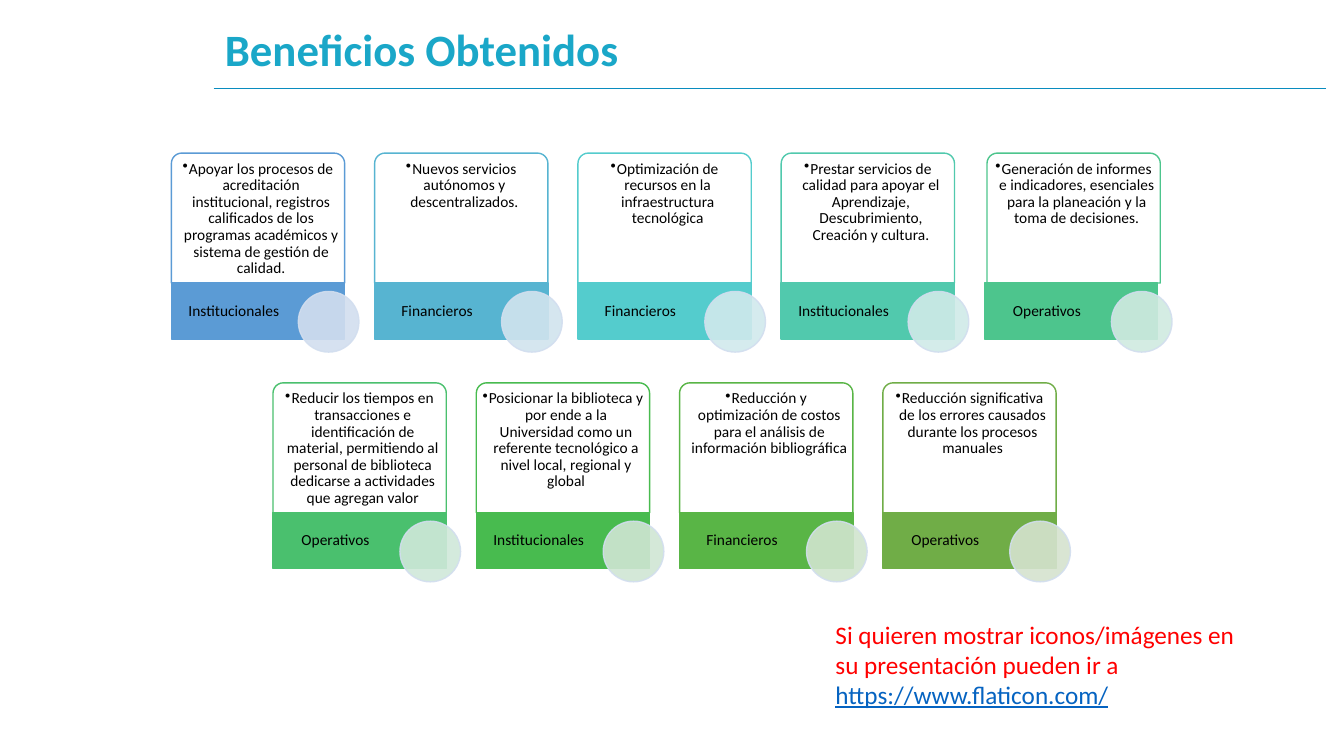
import pptx
import pptx.util
import pptx.dml.color
import pptx.enum.shapes
import pptx.enum.text
import pptx.oxml
import pptx.oxml.ns
from lxml import etree

Pt = pptx.util.Pt
RGBColor = pptx.dml.color.RGBColor
Shape = pptx.enum.shapes.MSO_SHAPE
Anchor = pptx.enum.text.MSO_ANCHOR
Align = pptx.enum.text.PP_ALIGN
AutoSize = pptx.enum.text.MSO_AUTO_SIZE
qn = pptx.oxml.ns.qn

WHITE = RGBColor(0xFF, 0xFF, 0xFF)
BLACK = RGBColor(0x00, 0x00, 0x00)
RED = RGBColor(0xFF, 0x00, 0x00)
LINK_BLUE = RGBColor(0x05, 0x63, 0xC1)
TITLE_TEAL = RGBColor(0x1A, 0xA7, 0xC8)
RULE_BLUE = RGBColor(0x09, 0x8C, 0xBF)
CIRCLE_EDGE = RGBColor(0xD2, 0xDE, 0xEF)

CARD_WIDTH, CARD_HEIGHT = 123.8, 92.8
BAR_HEIGHT, LABEL_WIDTH = 39.9, 87.1
COLUMN_STEP, ROW_STEP = 145.2, 164.1
FIRST_LEFT, FIRST_TOP = 122.4, 109.4
LAST_CARD_SHIFT = 1.8

ROWS = [
    [
        ("Institucionales", "Apoyar los procesos de acreditación institucional, registros "
         "calificados de los programas académicos y sistema de gestión de calidad.",
         RGBColor(0x5B, 0x9B, 0xD5), RGBColor(0xD2, 0xDE, 0xEF)),
        ("Financieros", "Nuevos servicios autónomos y descentralizados.",
         RGBColor(0x57, 0xB4, 0xD1), RGBColor(0xD1, 0xE4, 0xEE)),
        ("Financieros", "Optimización de recursos en la infraestructura tecnológica",
         RGBColor(0x54, 0xCC, 0xCD), RGBColor(0xD1, 0xE9, 0xED)),
        ("Institucionales", "Prestar servicios de calidad para apoyar el Aprendizaje, "
         "Descubrimiento, Creación y cultura.",
         RGBColor(0x51, 0xC9, 0xAD), RGBColor(0xD0, 0xEB, 0xE8)),
        ("Operativos", "Generación de informes e indicadores, esenciales para la "
         "planeación y la toma de decisiones.",
         RGBColor(0x4D, 0xC5, 0x8D), RGBColor(0xD0, 0xEA, 0xE1)),
    ],
    [
        ("Operativos", "Reducir los tiempos en transacciones e identificación de material, "
         "permitiendo al personal de biblioteca dedicarse a actividades que agregan valor",
         RGBColor(0x4A, 0xC0, 0x6E), RGBColor(0xD0, 0xE8, 0xDA)),
        ("Institucionales", "Posicionar la biblioteca y por ende a la Universidad como un "
         "referente tecnológico a nivel local, regional y global",
         RGBColor(0x48, 0xBB, 0x4F), RGBColor(0xD0, 0xE6, 0xD4)),
        ("Financieros", "Reducción y optimización de costos para el análisis de "
         "información bibliográfica",
         RGBColor(0x59, 0xB5, 0x46), RGBColor(0xD1, 0xE5, 0xCF)),
        ("Operativos", "Reducción significativa de los errores causados durante los "
         "procesos manuales",
         RGBColor(0x70, 0xAD, 0x47), RGBColor(0xD5, 0xE3, 0xCF)),
    ],
]


class Page:
    font_name = "Calibri"
    small, large, heading = 11, 18, 32
    opacity = "90000"

    def __init__(self, deck):
        self.slide = deck.slides.add_slide(deck.slide_layouts[5])

    def style(self, paragraph, size, color):
        paragraph.font.name = self.font_name
        paragraph.font.size = Pt(size)
        paragraph.font.color.rgb = color

    def title(self, text, left, top, width, height):
        box = self.slide.shapes.title
        box.left, box.top, box.width, box.height = map(Pt, (left, top, width, height))
        frame = box.text_frame
        frame.text = text
        frame.auto_size = AutoSize.NONE
        frame.vertical_anchor = Anchor.MIDDLE
        paragraph = frame.paragraphs[0]
        paragraph.alignment = Align.LEFT
        paragraph.line_spacing = 0.9
        self.style(paragraph, self.heading, TITLE_TEAL)
        paragraph.font.bold = True

    def rule(self, left, top, right):
        line = self.slide.shapes.add_connector(
            pptx.enum.shapes.MSO_CONNECTOR.STRAIGHT, Pt(left), Pt(top), Pt(right), Pt(top))
        line.line.color.rgb = RULE_BLUE
        line.line.width = Pt(0.5)
        etree.SubElement(line._element.spPr, qn("a:effectLst"))

    def shape(self, kind, left, top, width, height, fill, edge):
        shape = self.slide.shapes.add_shape(kind, Pt(left), Pt(top), Pt(width), Pt(height))
        shape.shadow.inherit = False
        shape.fill.solid()
        shape.fill.fore_color.rgb = fill
        shape.line.color.rgb = edge
        shape.line.width = Pt(1)
        return shape

    def fade(self, shape, edge_too=False):
        fills = shape._element.spPr.findall(qn("a:solidFill"))
        if edge_too:
            fills += shape._element.spPr.findall(qn("a:ln") + "/" + qn("a:solidFill"))
        for fill in fills:
            etree.SubElement(fill[0], qn("a:alpha"), val=self.opacity)

    def caption(self, shape, text, anchor, margins, bullet=False):
        frame = shape.text_frame
        frame.word_wrap = True
        frame.vertical_anchor = anchor
        (frame.margin_left, frame.margin_top,
         frame.margin_right, frame.margin_bottom) = map(Pt, margins)
        frame.text = text
        paragraph = frame.paragraphs[0]
        paragraph.alignment = Align.CENTER
        paragraph.line_spacing = 0.9
        if bullet:
            properties = paragraph._p.get_or_add_pPr()
            properties.set("marL", str(Pt(4.5)))
            properties.set("indent", str(-Pt(4.5)))
            etree.SubElement(properties, qn("a:buChar"), char="•")
        self.style(paragraph, self.small, BLACK)

    def card(self, left, top, shift, label, benefit, color, tint):
        panel = self.shape(Shape.ROUND_2_SAME_RECTANGLE, left + shift, top,
                           CARD_WIDTH, CARD_HEIGHT, WHITE, color)
        panel.adjustments[0] = 0.08
        panel.adjustments[1] = 0
        self.fade(panel)
        self.caption(panel, benefit, Anchor.TOP, (1.1, 3.3, 1.1, 1.1), bullet=True)
        bar = self.shape(Shape.RECTANGLE, left, top + CARD_HEIGHT,
                         CARD_WIDTH, BAR_HEIGHT, color, color)
        self.caption(bar, label, Anchor.MIDDLE, (3.3, 0, CARD_WIDTH - LABEL_WIDTH + 1.1, 0))
        circle = self.shape(Shape.OVAL, left + 90.7, top + 98.8, 43.3, 43.3, tint, CIRCLE_EDGE)
        self.fade(circle, edge_too=True)

    def note(self, left, top, width, height, text, address):
        box = self.slide.shapes.add_textbox(Pt(left), Pt(top), Pt(width), Pt(height))
        box.text_frame.word_wrap = True
        paragraph = box.text_frame.paragraphs[0]
        self.style(paragraph, self.large, RED)
        paragraph.add_run().text = text
        span = paragraph.add_run()
        span.text = address
        span.font.color.rgb = LINK_BLUE
        span.font.underline = True


def main():
    deck = pptx.Presentation()
    deck.slide_width, deck.slide_height = Pt(960), Pt(540)
    page = Page(deck)
    page.rule(152.6, 63.4, 946.8)
    page.title("Beneficios Obtenidos", 153.4, 16.6, 792.7, 41)
    longest = max(map(len, ROWS))
    for row, cards in enumerate(ROWS):
        start = FIRST_LEFT + (longest - len(cards)) * COLUMN_STEP / 2
        for column, card in enumerate(cards):
            shift = LAST_CARD_SHIFT if column == longest - 1 else 0
            page.card(start + column * COLUMN_STEP, FIRST_TOP + row * ROW_STEP, shift, *card)
    page.note(589.7, 438.5, 318.2, 72.7,
              "Si quieren mostrar iconos/imágenes en su presentación pueden ir a ",
              "https://www.flaticon.com/")
    deck.save("out.pptx")


if __name__ == "__main__":
    main()
